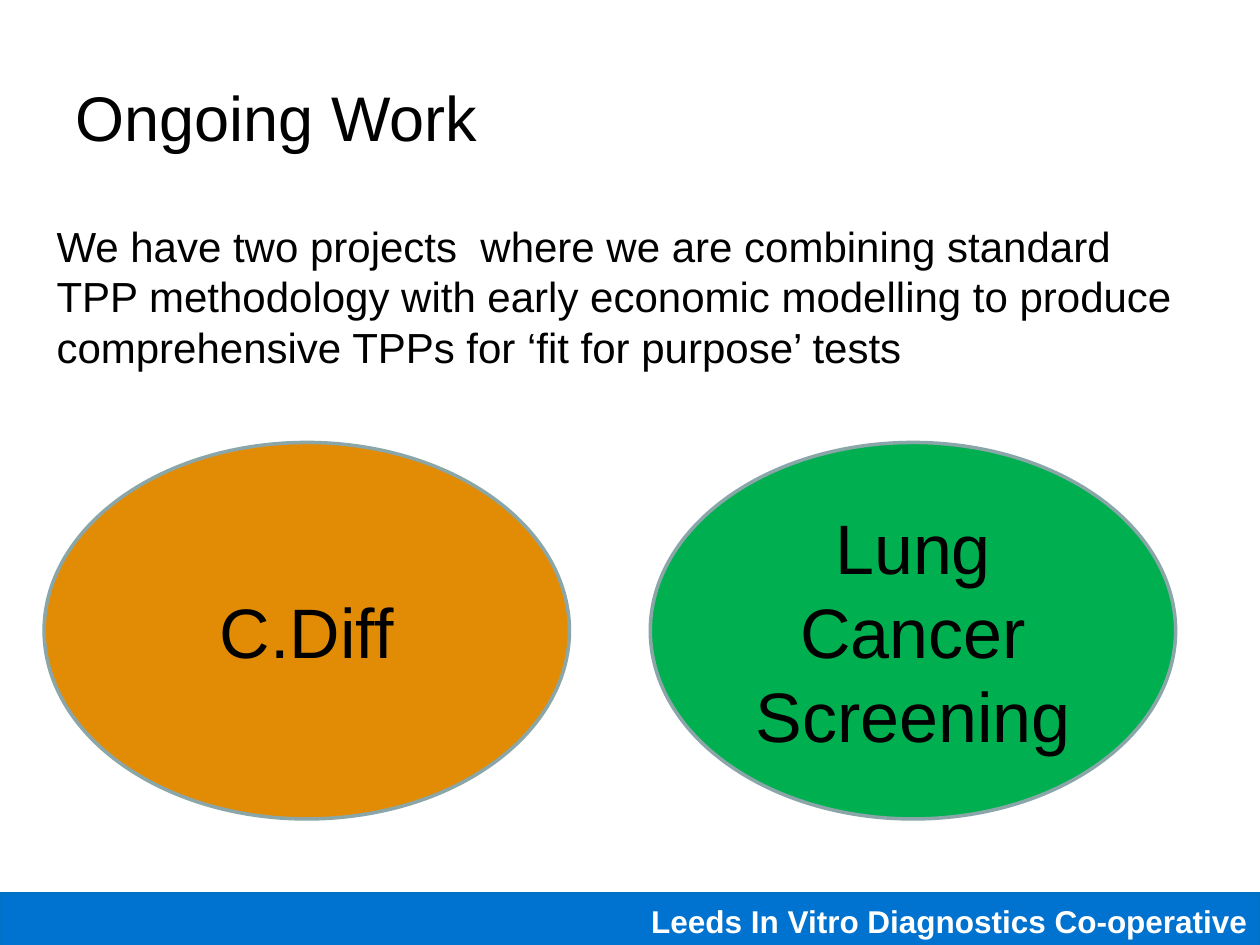
from pptx import Presentation
from pptx.dml.color import RGBColor
from pptx.enum.shapes import MSO_SHAPE as SHAPE
from pptx.enum.text import MSO_ANCHOR as ANCHOR, MSO_AUTO_SIZE as AUTO_SIZE, PP_ALIGN as ALIGN
from pptx.util import Cm, Pt

BLACK = RGBColor(0x00, 0x00, 0x00)
WHITE = RGBColor(0xFF, 0xFF, 0xFF)
BLUE = RGBColor(0x00, 0x72, 0xCF)
BLUE_LINE = RGBColor(0x00, 0x72, 0xC6)
ORANGE = RGBColor(0xE2, 0x8C, 0x05)
GREEN = RGBColor(0x00, 0xB0, 0x50)
GREY_LINE = RGBColor(0x8A, 0xA6, 0xA8)

LEFT = 0.89
PROJECT_STEP = 12.22
PROJECTS = [("C.Diff", ORANGE), ("Lung Cancer Screening", GREEN)]
INTRO = (
    "We have two projects  where we are combining standard TPP methodology "
    "with early economic modelling to produce comprehensive TPPs for "
    "‘fit for purpose’ tests"
)


def write(sp, text, size, align=ALIGN.LEFT, anchor=ANCHOR.MIDDLE, color=BLACK, bold=False):
    tf = sp.text_frame
    tf.word_wrap = True
    tf.vertical_anchor = anchor
    p = tf.paragraphs[0]
    p.alignment = align
    r = p.add_run()
    r.text = text
    for name, value in {"name": "Arial", "size": Pt(size), "bold": bold}.items():
        setattr(r.font, name, value)
    r.font.color.rgb = color


def add_panel(s, kind, box, fill, line):
    sp = s.shapes.add_shape(kind, *map(Cm, box))
    sp.shadow.inherit = False
    sp.fill.solid()
    sp.fill.fore_color.rgb = fill
    sp.line.color.rgb = line
    sp.line.width = Pt(2)
    return sp


def add_footer(s):
    sp = add_panel(s, SHAPE.RECTANGLE, (0, 18.01, 25.4, 1.12), BLUE, BLUE_LINE)
    write(sp, "Leeds In Vitro Diagnostics Co-operative", 18, ALIGN.RIGHT, color=WHITE, bold=True)


def add_title(s, text):
    sp = s.shapes.title
    box = {"left": 1.27, "top": 0.76, "width": 22.86, "height": 3.18}
    for name, value in box.items():
        setattr(sp, name, Cm(value))
    write(sp, text, 36)


def add_project(s, index, name, fill):
    box = (LEFT + index * PROJECT_STEP, 8.92, 10.59, 7.59)
    sp = add_panel(s, SHAPE.OVAL, box, fill, GREY_LINE)
    write(sp, name, 40, ALIGN.CENTER)


def add_intro(s):
    sp = s.shapes.add_textbox(Cm(LEFT), Cm(4.32), Cm(23.6), Cm(3.33))
    write(sp, INTRO, 24, anchor=ANCHOR.TOP)
    sp.text_frame.auto_size = AUTO_SIZE.SHAPE_TO_FIT_TEXT


def main():
    prs = Presentation()
    prs.slide_width, prs.slide_height = Cm(25.4), Cm(19.05)
    s = prs.slides.add_slide(prs.slide_layouts[5])
    add_footer(s)
    add_title(s, "Ongoing Work")
    for index, (name, fill) in enumerate(PROJECTS):
        add_project(s, index, name, fill)
    add_intro(s)
    prs.save("out.pptx")


if __name__ == "__main__":
    main()
